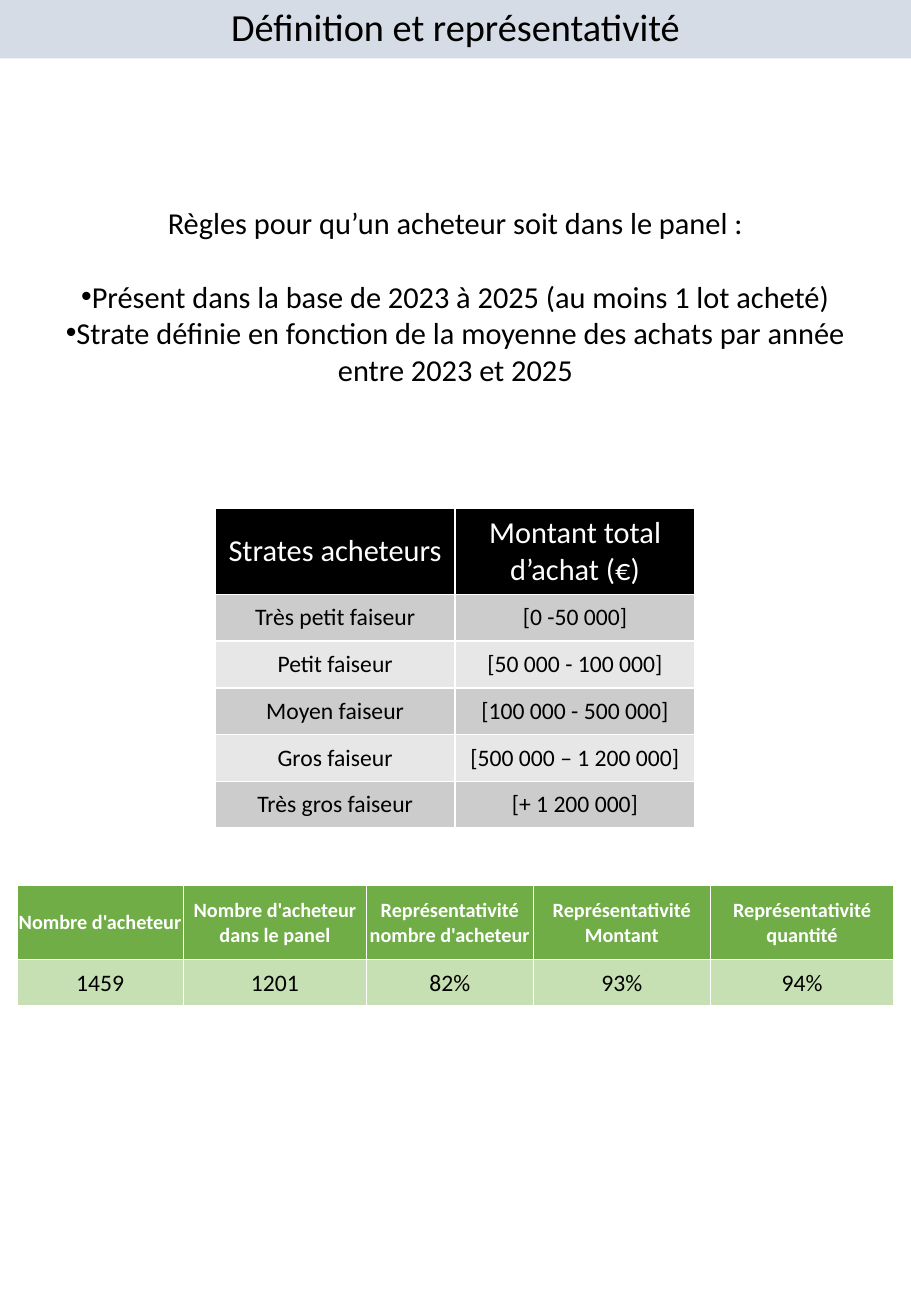
from dataclasses import dataclass

from lxml import etree
from pptx import Presentation
from pptx.dml.color import RGBColor
from pptx.enum.shapes import MSO_SHAPE
from pptx.enum.text import MSO_ANCHOR, PP_ALIGN
from pptx.oxml.ns import qn
from pptx.util import Pt

RECT = MSO_SHAPE.RECTANGLE
MIDDLE = MSO_ANCHOR.MIDDLE
CENTER = PP_ALIGN.CENTER


@dataclass(frozen=True)
class Theme:
    """Colours, font and type sizes of the slide."""
    font: str = "Calibri"
    black: str = "000000"
    white: str = "FFFFFF"
    band: str = "D6DCE5"
    greys: tuple = ("CCCCCC", "E7E7E7")
    green: str = "70AD47"
    pale: str = "C6E0B4"
    title: float = 22.7
    large: float = 18
    body: float = 14
    small: float = 12


THEME = Theme()

STRATA = [
    ("Strates acheteurs", "Montant total d’achat (€)"),
    ("Très petit faiseur", "[0 -50 000]"),
    ("Petit faiseur", "[50 000 - 100 000]"),
    ("Moyen faiseur", "[100 000 - 500 000]"),
    ("Gros faiseur", "[500 000 – 1 200 000]"),
    ("Très gros faiseur", "[+ 1 200 000]"),
]
PANEL = [
    ("Nombre d'acheteur", "Nombre d'acheteur dans le panel",
     "Représentativité nombre d'acheteur", "Représentativité Montant",
     "Représentativité quantité"),
    ("1459", "1201", "82%", "93%", "94%"),
]
RULES = [
    "Présent dans la base de 2023 à 2025 (au moins 1 lot acheté)",
    "Strate définie en fonction de la moyenne des achats par année "
    "entre 2023 et 2025",
]


def write(para, text, size=THEME.large, color=THEME.black, bold=False,
          bullet=False, before=0):
    """Write centred text into a paragraph with the given format."""
    para.alignment = CENTER
    if before:
        para.space_before = Pt(before)
    if bullet:
        props = para._p.get_or_add_pPr()
        props.set("marL", "0")
        props.set("indent", "0")
        etree.SubElement(props, qn("a:buFont"), typeface="Arial")
        etree.SubElement(props, qn("a:buChar"), char="•")
    run = para.add_run()
    run.text = text
    run.font.name = THEME.font
    run.font.size = Pt(size)
    run.font.bold = bold
    run.font.color.rgb = RGBColor.from_string(color)


def add_band(slide, width, height):
    """Draw the plain band behind the title."""
    band = slide.shapes.add_shape(RECT, 0, 0, width, height)
    band.shadow.inherit = False
    band.fill.solid()
    band.fill.fore_color.rgb = RGBColor.from_string(THEME.band)
    band.line.fill.background()


def add_box(slide, left, top, width, height, inset=3.6):
    """Add a wrapping text box and return its frame."""
    box = slide.shapes.add_textbox(Pt(left), Pt(top), Pt(width), Pt(height))
    frame = box.text_frame
    frame.word_wrap = True
    frame.margin_top = frame.margin_bottom = Pt(inset)
    return frame


def edge(cell, weight):
    """Give a cell white borders on all four sides."""
    props = cell._tc.get_or_add_tcPr()
    for side in ("a:lnL", "a:lnR", "a:lnT", "a:lnB"):
        line = etree.SubElement(props, qn(side), w=str(Pt(weight)))
        fill = etree.SubElement(line, qn("a:solidFill"))
        etree.SubElement(fill, qn("a:srgbClr"), val=THEME.white)


def add_grid(slide, rows, left, top, widths, heights, head, fills, weight,
             size, bold=False, inset=None):
    """Add a table with a header row and cycling body fills."""
    table = slide.shapes.add_table(
        len(rows), len(widths), Pt(left), Pt(top),
        Pt(sum(widths)), Pt(sum(heights))).table
    for col, width in zip(table.columns, widths):
        col.width = Pt(width)
    for i, (row, height) in enumerate(zip(rows, heights)):
        table.rows[i].height = Pt(height)
        first = i == 0
        shade = head if first else fills[(i - 1) % len(fills)]
        for j, text in enumerate(row):
            cell = table.cell(i, j)
            cell.vertical_anchor = MIDDLE
            if inset is not None:
                cell.margin_left = cell.margin_right = Pt(inset)
                cell.margin_top, cell.margin_bottom = Pt(inset), 0
            edge(cell, weight)
            cell.fill.solid()
            cell.fill.fore_color.rgb = RGBColor.from_string(shade)
            write(cell.text_frame.paragraphs[0], text,
                  size=size if first else THEME.body,
                  color=THEME.white if first else THEME.black,
                  bold=bold and first)


def main():
    """Build the slide and save it."""
    deck = Presentation()
    deck.slide_width, deck.slide_height = Pt(540), Pt(779.76)
    slide = deck.slides.add_slide(deck.slide_layouts[6])

    add_band(slide, deck.slide_width, Pt(34.56))
    add_grid(slide, STRATA, 127.6, 301, [142.2] * 2, [51] + [27.7] * 5,
             THEME.black, THEME.greys, 1, THEME.large)

    title = add_box(slide, 0, 1.8, 540, 28, inset=0)
    write(title.paragraphs[0], "Définition et représentativité",
          size=THEME.title)

    rules = add_box(slide, 20.9, 117.4, 498.2, 138.2)
    write(rules.paragraphs[0],
          "Règles pour qu’un acheteur soit dans le panel :")
    for i, text in enumerate(RULES):
        write(rules.add_paragraph(), text, bullet=True,
              before=0 if i else 22)

    add_grid(slide, PANEL, 10, 524.6, [98.7, 108.6, 98.7, 105.2, 108.6],
             [43.9, 27.5], THEME.green, [THEME.pale], 0.5, THEME.small,
             bold=True, inset=0.7)
    deck.save("out.pptx")


if __name__ == "__main__":
    main()
